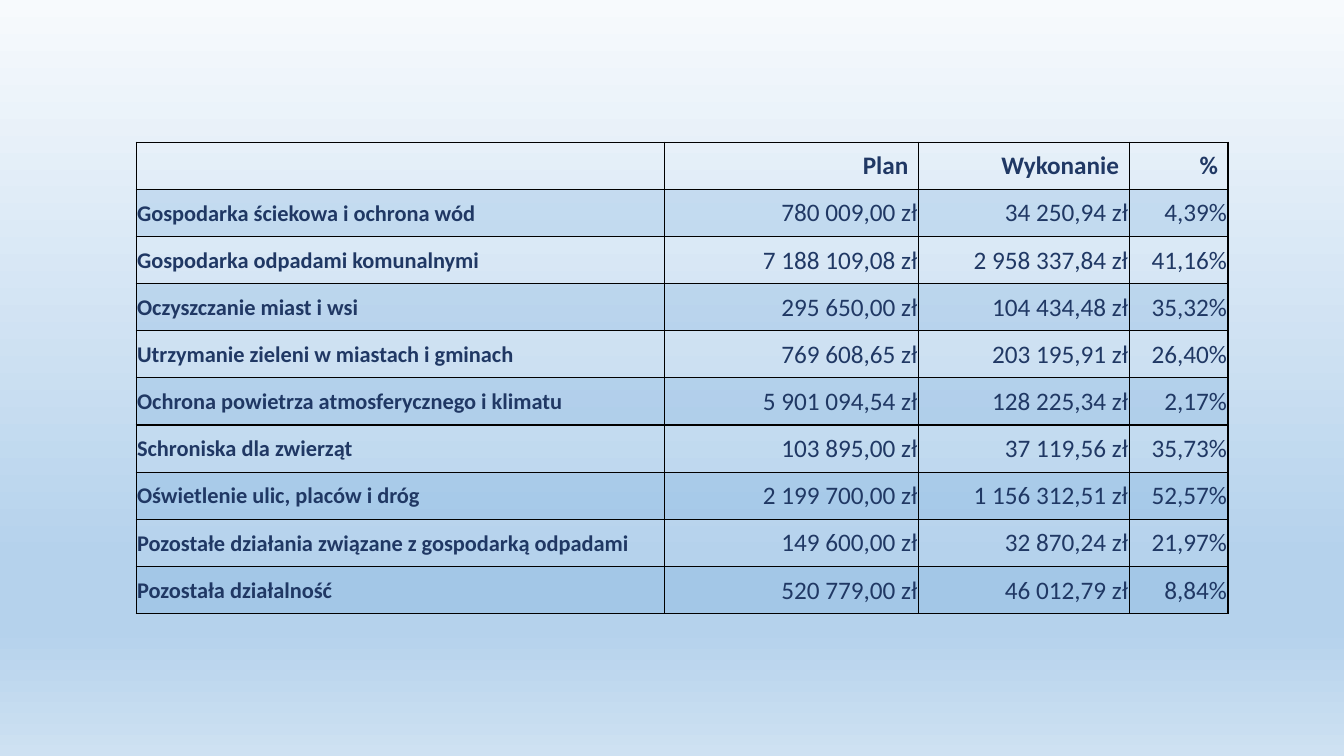
from dataclasses import dataclass
from typing import NamedTuple

from lxml import etree
from pptx import Presentation
from pptx import util as u
from pptx.dml import color
from pptx.enum import text
from pptx.oxml import ns


@dataclass(frozen=True)
class Theme:
    font: str = "Calibri"
    ink: str = "203864"
    band: str = "5B9BD5"
    alpha: int = 20
    rule: str = "000000"
    width: float = 1
    label: int = 16
    value: int = 18
    sky: tuple = ((0, "F7FAFD"), (74, "B5D2EC"), (83, "B5D2EC"), (100, "CEE1F2"))


class Item(NamedTuple):
    name: str
    plan: str
    done: str
    share: str


LOOK = Theme()
COLS = (5.24, 2.52, 2.09, 0.98)
ITEMS = (
    Item("", "Plan", "Wykonanie", "%"),
    Item("Gospodarka ściekowa i ochrona wód", "780 009,00 zł", "34 250,94 zł", "4,39%"),
    Item("Gospodarka odpadami komunalnymi", "7 188 109,08 zł", "2 958 337,84 zł", "41,16%"),
    Item("Oczyszczanie miast i wsi", "295 650,00 zł", "104 434,48 zł", "35,32%"),
    Item("Utrzymanie zieleni w miastach i gminach", "769 608,65 zł", "203 195,91 zł", "26,40%"),
    Item("Ochrona powietrza atmosferycznego i klimatu", "5 901 094,54 zł", "128 225,34 zł", "2,17%"),
    Item("Schroniska dla zwierząt", "103 895,00 zł", "37 119,56 zł", "35,73%"),
    Item("Oświetlenie ulic, placów i dróg", "2 199 700,00 zł", "1 156 312,51 zł", "52,57%"),
    Item("Pozostałe działania związane z gospodarką odpadami", "149 600,00 zł", "32 870,24 zł", "21,97%"),
    Item("Pozostała działalność", "520 779,00 zł", "46 012,79 zł", "8,84%"),
)


def add(parent, tag: str, **attrs: str):
    return etree.SubElement(parent, ns.qn(tag), attrs)


def paint_sky(slide) -> None:
    fill = slide.background.fill
    fill.gradient()
    fill.gradient_angle = 270
    stops = next(slide.element.iter(ns.qn("a:gsLst")))
    for stop in list(stops):
        stops.remove(stop)
    for place, tone in LOOK.sky:
        stop = add(stops, "a:gs", pos=str(place * 1000))
        add(stop, "a:srgbClr", val=tone)


def frame(cell) -> None:
    props = cell._tc.get_or_add_tcPr()
    for side in "LRTB":
        line = add(props, f"a:ln{side}", w=str(u.Pt(LOOK.width)))
        add(add(line, "a:solidFill"), "a:srgbClr", val=LOOK.rule)


def shade(cell, band: bool) -> None:
    if not band:
        cell.fill.background()
        return
    cell.fill.solid()
    cell.fill.fore_color.rgb = color.RGBColor.from_string(LOOK.band)
    tone = cell._tc.tcPr.find(ns.qn("a:solidFill"))[0]
    add(tone, "a:alpha", val=str(LOOK.alpha * 1000))


def write(cell, words: str, head: bool, label: bool) -> None:
    cell.vertical_anchor = text.MSO_ANCHOR.MIDDLE
    if not head:
        cell.margin_left = cell.margin_right = cell.margin_top = u.Inches(0.01)
        cell.margin_bottom = 0
    if not words:
        return
    cell.text = words
    para = cell.text_frame.paragraphs[0]
    para.alignment = text.PP_ALIGN.LEFT if label else text.PP_ALIGN.RIGHT
    font = para.font
    font.name = LOOK.font
    font.size = u.Pt(LOOK.label if label else LOOK.value)
    font.bold = head or label
    font.color.rgb = color.RGBColor.from_string(LOOK.ink)


def add_budget(slide) -> None:
    table = slide.shapes.add_table(
        len(ITEMS), len(COLS),
        u.Inches(1.35), u.Inches(1.41), u.Inches(sum(COLS)), u.Inches(4.68),
    ).table
    table.first_row = table.horz_banding = False
    for col, width in zip(table.columns, COLS):
        col.width = u.Inches(width)
    for row, item in enumerate(ITEMS):
        for col, words in enumerate(item):
            cell = table.cell(row, col)
            frame(cell)
            shade(cell, row % 2 == 1)
            write(cell, words, row == 0, col == 0)


def main() -> None:
    deck = Presentation()
    deck.slide_width, deck.slide_height = u.Inches(13.33), u.Inches(7.5)
    slide = deck.slides.add_slide(deck.slide_layouts[6])
    # Background gradient
    paint_sky(slide)
    # Budget table
    add_budget(slide)
    deck.save("out.pptx")


if __name__ == "__main__":
    main()
